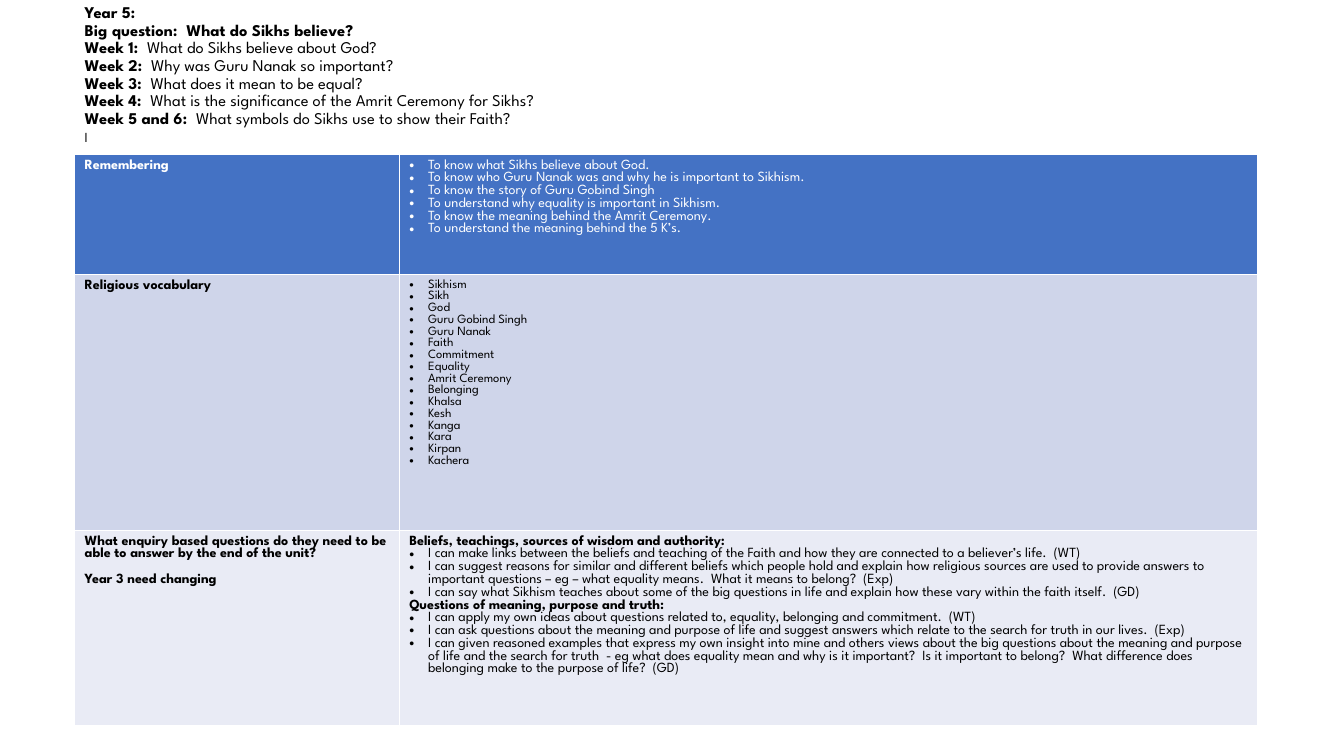
from dataclasses import dataclass

from lxml import etree
from pptx import Presentation
from pptx.dml.color import RGBColor
from pptx.enum.text import MSO_ANCHOR, MSO_AUTO_SIZE, PP_ALIGN
from pptx.oxml.ns import qn
from pptx.util import Pt

LEFT = PP_ALIGN.LEFT
TOP, MIDDLE = MSO_ANCHOR.TOP, MSO_ANCHOR.MIDDLE
NO_AUTOFIT = MSO_AUTO_SIZE.NONE


@dataclass(frozen=True)
class Theme:
    """Colours, typeface and type sizes of the slide."""
    font: str = "League Spartan"
    white: str = "FFFFFF"
    black: str = "000000"
    header: str = "4472C4"
    band: str = "CFD5EA"
    light: str = "E9EBF5"
    title: float = 11.7
    mark: float = 9.9
    body: float = 10
    vocabulary: float = 9
    bullet_indent: float = 13.5


THEME = Theme()
SLIDE_SIZE = (959.76, 540)
TITLE_BOX = (53.3, 24.5, 813.6, 74.9)
TABLE_BOX = (53.3, 110.2, 844.6, 408.2)
COLUMN_WIDTHS = (231.8, 612.8)
ROW_HEIGHTS = (85.7, 182.9, 139.7)

HEADING = [
    ("Year 5:", ""),
    ("Big question:  What do Sikhs believe?", ""),
    ("Week 1:  ", "What do Sikhs believe about God?"),
    ("Week 2:  ", "Why was Guru Nanak so important?"),
    ("Week 3:  ", "What does it mean to be equal?"),
    ("Week 4:  ", "What is the significance of the Amrit Ceremony for Sikhs?"),
    ("Week 5 and 6:  ", "What symbols do Sikhs use to show their Faith?"),
]
REMEMBERING = [
    "To know what Sikhs believe about God.",
    "To know who Guru Nanak was and why he is important to Sikhism.",
    "To know the story of Guru Gobind Singh",
    "To understand why equality is important in Sikhism.",
    "To know the meaning behind the Amrit Ceremony.",
    "To understand the meaning behind the 5 K’s.",
]
VOCABULARY = [
    "Sikhism", "Sikh", "God", "Guru Gobind Singh", "Guru Nanak", "Faith",
    "Commitment", "Equality", "Amrit Ceremony", "Belonging", "Khalsa", "Kesh",
    "Kanga", "Kara", "Kirpan", "Kachera",
]
BELIEFS = [
    "I can make links between the beliefs and teaching of the Faith and how they "
    "are connected to a believer’s life.  (WT)",
    "I can suggest reasons for similar and different beliefs which people hold and "
    "explain how religious sources are used to provide answers to important "
    "questions – eg – what equality means.  What it means to belong?  (Exp)",
    "I can say what Sikhism teaches about some of the big questions in life and "
    "explain how these vary within the faith itself.  (GD)",
]
MEANING = [
    "I can apply my own ideas about questions related to, equality, belonging and "
    "commitment.  (WT)",
    "I can ask questions about the meaning and purpose of life and suggest answers "
    "which relate to the search for truth in our lives.  (Exp)",
    "I can given reasoned examples that express my own insight into mine and others "
    "views about the big questions about the meaning and purpose of life and the "
    "search for truth  - eg what does equality mean and why is it important?  Is it "
    "important to belong?  What difference does belonging make to the purpose of "
    "life?  (GD)",
]


def labels(*texts):
    """Mark texts as bold, unbulleted paragraphs."""
    return [(text, True) for text in texts]


def points(texts):
    """Mark texts as regular, bulleted paragraphs."""
    return [(text, False) for text in texts]


ROWS = [
    (THEME.header, THEME.white, THEME.body,
     labels("Remembering"), points(REMEMBERING)),
    (THEME.band, THEME.black, THEME.vocabulary,
     labels("Religious vocabulary"), points(VOCABULARY)),
    (THEME.light, THEME.black, THEME.body,
     labels("What enquiry based questions do they need to be able to answer by "
            "the end of the unit?", "Year 3 need changing"),
     labels("Beliefs, teachings, sources of wisdom and authority:") + points(BELIEFS)
     + labels("Questions of meaning, purpose and truth:") + points(MEANING)),
]


def apply_format(target, values):
    """Set each attribute of target named in values."""
    for attribute, value in values.items():
        setattr(target, attribute, value)


def add_run(paragraph, text, size, color, bold):
    """Add a run in the theme typeface."""
    run = paragraph.add_run()
    run.text = text
    apply_format(run.font, {"name": THEME.font, "size": Pt(size), "bold": bold})
    run.font.color.rgb = RGBColor.from_string(color)


def add_bullet(paragraph):
    """Give a paragraph a hanging bullet."""
    properties = paragraph._p.get_or_add_pPr()
    indent = Pt(THEME.bullet_indent)
    properties.set("marL", str(indent))
    properties.set("indent", str(-indent))
    etree.SubElement(properties, qn("a:buFont")).set("typeface", "Arial")
    etree.SubElement(properties, qn("a:buChar")).set("char", "•")


def build_heading(slide, box):
    """Place the unit heading and weekly questions in the title placeholder."""
    title = slide.shapes.title
    apply_format(title, dict(zip(("left", "top", "width", "height"), map(Pt, box))))
    frame = title.text_frame
    apply_format(frame, {"word_wrap": True, "auto_size": NO_AUTOFIT,
                         "vertical_anchor": MIDDLE, "margin_bottom": Pt(20.6)})
    paragraph = frame.paragraphs[0]
    apply_format(paragraph, {"alignment": LEFT, "line_spacing": Pt(12.6)})
    for lead, question in HEADING:
        add_run(paragraph, lead, THEME.title, THEME.black, True)
        if question:
            add_run(paragraph, question, THEME.title, THEME.black, False)
        paragraph.add_line_break()
    add_run(paragraph, "I", THEME.mark, THEME.black, False)


def fill_cell(cell, paragraphs, fill, color, size):
    """Fill a table cell with its labels and bulleted points."""
    cell.fill.solid()
    cell.fill.fore_color.rgb = RGBColor.from_string(fill)
    cell.vertical_anchor = TOP
    frame = cell.text_frame
    for index, (text, is_label) in enumerate(paragraphs):
        paragraph = frame.add_paragraph() if index else frame.paragraphs[0]
        add_run(paragraph, text, size, color, is_label)
        if not is_label:
            add_bullet(paragraph)


def build_unit_table(slide, box):
    """Place the table of knowledge, vocabulary and enquiry questions."""
    table = slide.shapes.add_table(len(ROWS), len(COLUMN_WIDTHS), *map(Pt, box)).table
    for column, width in zip(table.columns, COLUMN_WIDTHS):
        column.width = Pt(width)
    for index, (fill, color, size, topic, content) in enumerate(ROWS):
        table.rows[index].height = Pt(ROW_HEIGHTS[index])
        fill_cell(table.cell(index, 0), topic, fill, color, THEME.body)
        fill_cell(table.cell(index, 1), content, fill, color, size)
    closing_note = table.cell(len(ROWS) - 1, 0).text_frame.paragraphs[-1]
    closing_note.space_before = Pt(9.2)


def main():
    """Build and save the unit overview slide."""
    presentation = Presentation()
    apply_format(presentation, dict(zip(("slide_width", "slide_height"),
                                        map(Pt, SLIDE_SIZE))))
    slide = presentation.slides.add_slide(presentation.slide_layouts[5])
    build_heading(slide, TITLE_BOX)
    build_unit_table(slide, TABLE_BOX)
    presentation.save("out.pptx")


if __name__ == "__main__":
    main()
